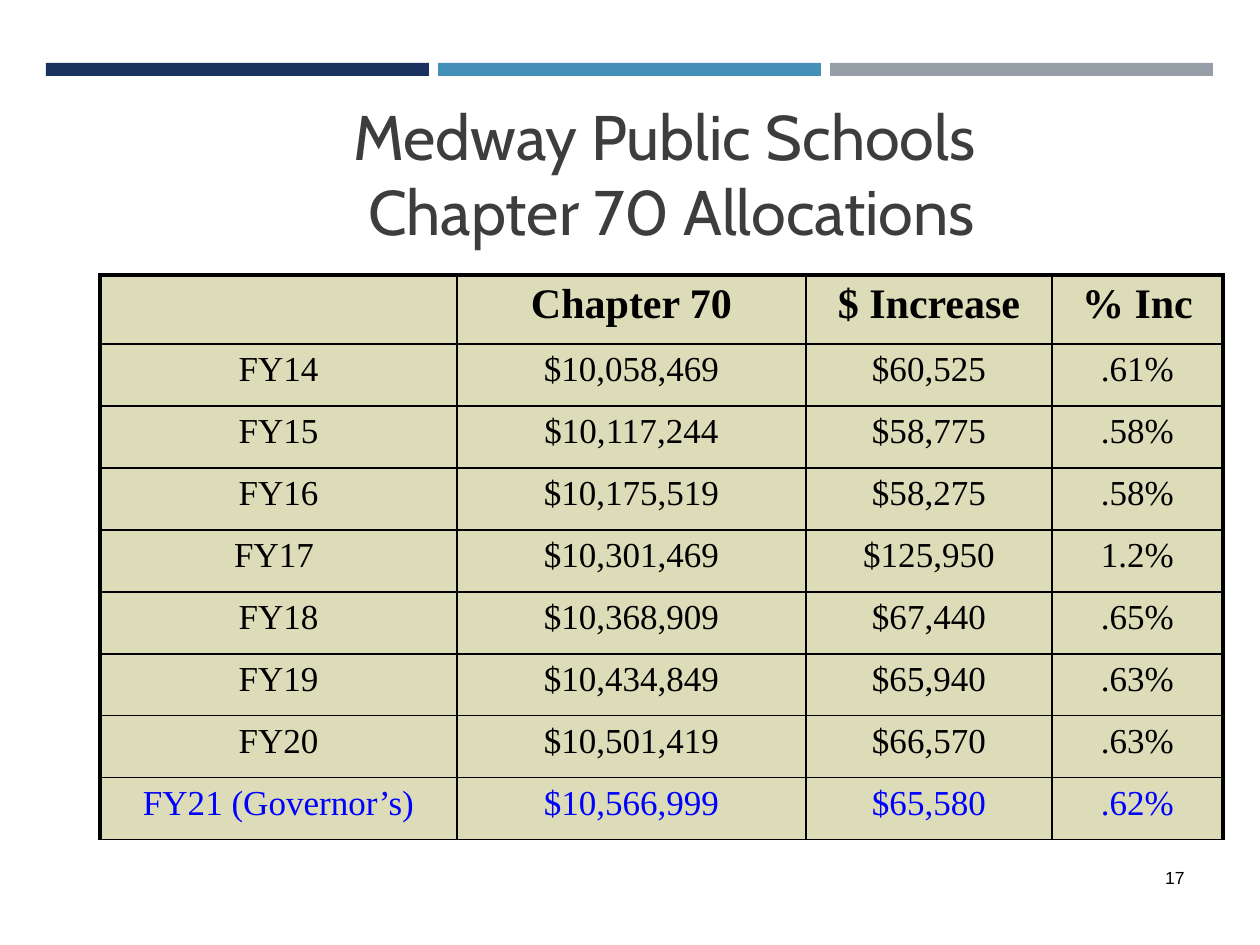
from lxml import etree
from pptx import Presentation
from pptx import util as u
from pptx.dml.color import RGBColor
from pptx.enum import shapes, text
from pptx.oxml import ns

PX_PER_INCH = 126
BLACK, BLUE, TITLE_GREY, CELL_FILL = "000000", "0000FF", "3D3D3D", "DDDCB8"
BAR_COLOURS = ["1A3260", "4590B8", "969FA7"]
COLUMN_WIDTHS = [357, 349, 246, 171]
HEADER_HEIGHT, ROW_HEIGHT = 69, 62
THIN, THICK = 1, 2.25
ALLOCATIONS = [
    ["", "Chapter 70", "$ Increase", "% Inc"],
    ["FY14", "$10,058,469", "$60,525", ".61%"],
    ["FY15", "$10,117,244", "$58,775", ".58%"],
    ["FY16", "$10,175,519", "$58,275", ".58%"],
    ["FY17 ", "$10,301,469", "$125,950", "1.2%"],
    ["FY18", "$10,368,909", "$67,440", ".65%"],
    ["FY19", "$10,434,849", "$65,940", ".63%"],
    ["FY20", "$10,501,419", "$66,570", ".63%"],
    ["FY21 (Governor’s)", "$10,566,999", "$65,580", ".62%"],
]


def px(length):
    return u.Emu(round(length * u.Inches(1) / PX_PER_INCH))


def colour(code):
    return RGBColor.from_string(code)


def add_bar(slide, left, top, width, height, fill):
    bar = slide.shapes.add_shape(
        shapes.MSO_SHAPE.RECTANGLE, px(left), px(top), px(width), px(height))
    bar.shadow.inherit = False
    bar.fill.solid()
    bar.fill.fore_color.rgb = colour(fill)
    bar.line.fill.background()


def write(para, words, size, font, ink, align, bold=False):
    para.alignment = align
    span = para.add_run()
    span.text = words
    span.font.size = u.Pt(size)
    span.font.name = font
    span.font.bold = bold
    span.font.color.rgb = colour(ink)


def add_text(slide, left, top, width, height, lines, size, font, ink, align,
             anchor=text.MSO_ANCHOR.TOP):
    box = slide.shapes.add_textbox(px(left), px(top), px(width), px(height))
    frame = box.text_frame
    frame.word_wrap = True
    frame.vertical_anchor = anchor
    for index, line in enumerate(lines):
        para = frame.add_paragraph() if index else frame.paragraphs[0]
        write(para, line, size, font, ink, align)


def set_borders(cell, **widths):
    """Draw black borders; widths are points, keyed by side L, R, T, B."""
    properties = cell._tc.get_or_add_tcPr()
    for side, width in widths.items():
        line = etree.SubElement(properties, ns.qn(f"a:ln{side}"), w=str(u.Pt(width)))
        fill = etree.SubElement(line, ns.qn("a:solidFill"))
        etree.SubElement(fill, ns.qn("a:srgbClr"), val=BLACK)


def add_allocation_table(slide, left, top):
    rows, columns = len(ALLOCATIONS), len(COLUMN_WIDTHS)
    heights = [HEADER_HEIGHT] + [ROW_HEIGHT] * (rows - 1)
    table = slide.shapes.add_table(
        rows, columns, px(left), px(top),
        px(sum(COLUMN_WIDTHS)), px(sum(heights))).table
    for column, width in zip(table.columns, COLUMN_WIDTHS):
        column.width = px(width)
    for r, values in enumerate(ALLOCATIONS):
        table.rows[r].height = px(heights[r])
        header, proposed = r == 0, r == rows - 1
        for c, value in enumerate(values):
            cell = table.cell(r, c)
            set_borders(cell,
                        L=THICK if c == 0 else THIN,
                        R=THICK if c == columns - 1 else THIN,
                        T=THICK if header else THIN,
                        B=THIN)
            cell.fill.solid()
            cell.fill.fore_color.rgb = colour(CELL_FILL)
            if value:
                write(cell.text_frame.paragraphs[0], value, 24 if header else 20,
                      "Times New Roman", BLUE if proposed else BLACK,
                      text.PP_ALIGN.CENTER, bold=header)


def main():
    deck = Presentation()
    deck.slide_width, deck.slide_height = px(1260), px(945)
    slide = deck.slides.add_slide(deck.slide_layouts[6])
    for index, fill in enumerate(BAR_COLOURS):
        add_bar(slide, 46 + index * 392, 63, 383, 13, fill)
    add_text(slide, 935, 861, 262, 63, ["17"], 10, "Arial", BLACK,
             text.PP_ALIGN.RIGHT)
    add_text(slide, 136, 103, 1071, 140,
             ["Medway Public Schools ", "Chapter 70 Allocations"],
             36, "Cabin", TITLE_GREY, text.PP_ALIGN.CENTER,
             text.MSO_ANCHOR.MIDDLE)
    add_allocation_table(slide, 100, 275)
    deck.save("out.pptx")


if __name__ == "__main__":
    main()
